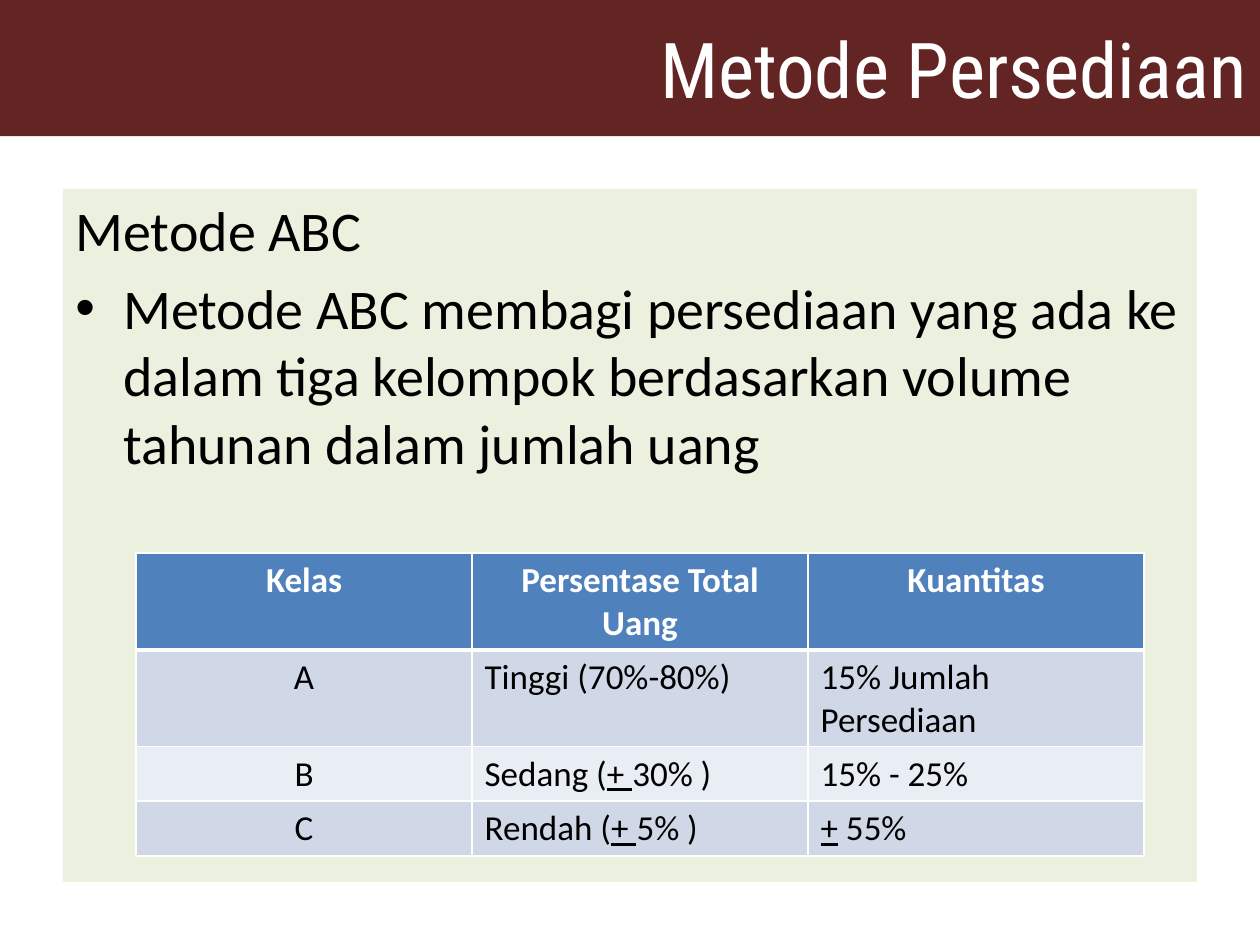
"""Build the inventory method slide with its ABC class table."""
from lxml.etree import SubElement
from pptx import Presentation
from pptx.dml.color import RGBColor
from pptx.enum.text import MSO_ANCHOR, PP_ALIGN
from pptx.oxml import parse_xml
from pptx.oxml.ns import nsdecls, qn
from pptx.util import Inches, Pt

COLORS = {
    "maroon": "632523", "green": "EBF1DE", "blue": "4F81BD",
    "band": "D0D8E8", "light": "E9EDF4", "white": "FFFFFF", "black": "000000",
}
ROWS = [
    ("Kelas", "Persentase Total Uang", "Kuantitas"),
    ("A", "Tinggi (70%-80%)", "15% Jumlah Persediaan"),
    ("B", "Sedang (_+ _30% )", "15% - 25%"),
    ("C", "Rendah (_+ _5% )", "_+_ 55%"),
]
FILLS = ["blue", "band", "light", "band"]


def write(p, text, size=32, color="black", font="Calibri", bold=False, align=PP_ALIGN.LEFT):
    """Write text into a paragraph, underlining what stands between underscores."""
    p.alignment = align
    for i, part in enumerate(text.split("_")):
        if part:
            r = p.add_run()
            r.text = part
            r.font.size = Pt(size)
            r.font.name = font
            r.font.bold = bold
            r.font.underline = i % 2 == 1
            r.font.color.rgb = RGBColor.from_string(COLORS[color])


def paint(obj, color):
    """Give a shape or cell a solid fill."""
    obj.fill.solid()
    obj.fill.fore_color.rgb = RGBColor.from_string(COLORS[color])


prs = Presentation()
prs.slide_width, prs.slide_height = Inches(10), Inches(7.5)
s = prs.slides.add_slide(prs.slide_layouts[5])

title = s.shapes.title
title.left, title.top, title.width, title.height = Inches(0), Inches(0), Inches(10), Inches(1.08)
paint(title, "maroon")
title.text_frame.vertical_anchor = MSO_ANCHOR.MIDDLE
write(title.text_frame.paragraphs[0], "Metode Persediaan", size=44, color="white",
      font="Roboto Condensed", align=PP_ALIGN.RIGHT)

body = s.shapes.add_textbox(Inches(0.5), Inches(1.5), Inches(9), Inches(5.5))
paint(body, "green")
tf = body.text_frame
tf.word_wrap = True
write(tf.paragraphs[0], "Metode ABC")
p = tf.add_paragraph()
p.space_before = Pt(6.4)
pPr = p._p.get_or_add_pPr()
pPr.set("marL", str(Inches(0.38)))
pPr.set("indent", str(Inches(-0.38)))
SubElement(pPr, qn("a:buFont"), typeface="Arial")
SubElement(pPr, qn("a:buChar"), char="•")
write(p, "Metode ABC membagi persediaan yang ada ke dalam tiga kelompok "
         "berdasarkan volume tahunan dalam jumlah uang")

table = s.shapes.add_table(4, 3, Inches(1.08), Inches(4.39), Inches(8), Inches(1.64)).table
for y, row in enumerate(ROWS):
    for x, text in enumerate(row):
        cell = table.cell(y, x)
        tcPr = cell._tc.get_or_add_tcPr()
        widths = {"L": 1, "R": 1, "T": 3 if y == 1 else 1, "B": 3 if y == 0 else 1}
        for side, width in widths.items():
            tcPr.append(parse_xml(
                f'<a:ln{side} {nsdecls("a")} w="{Pt(width)}"><a:solidFill>'
                f'<a:srgbClr val="{COLORS["white"]}"/></a:solidFill></a:ln{side}>'))
        paint(cell, FILLS[y])
        header = y == 0
        write(cell.text_frame.paragraphs[0], text, size=20, bold=header,
              color="white" if header else "black",
              align=PP_ALIGN.CENTER if header or x == 0 else PP_ALIGN.LEFT)

prs.save("out.pptx")
